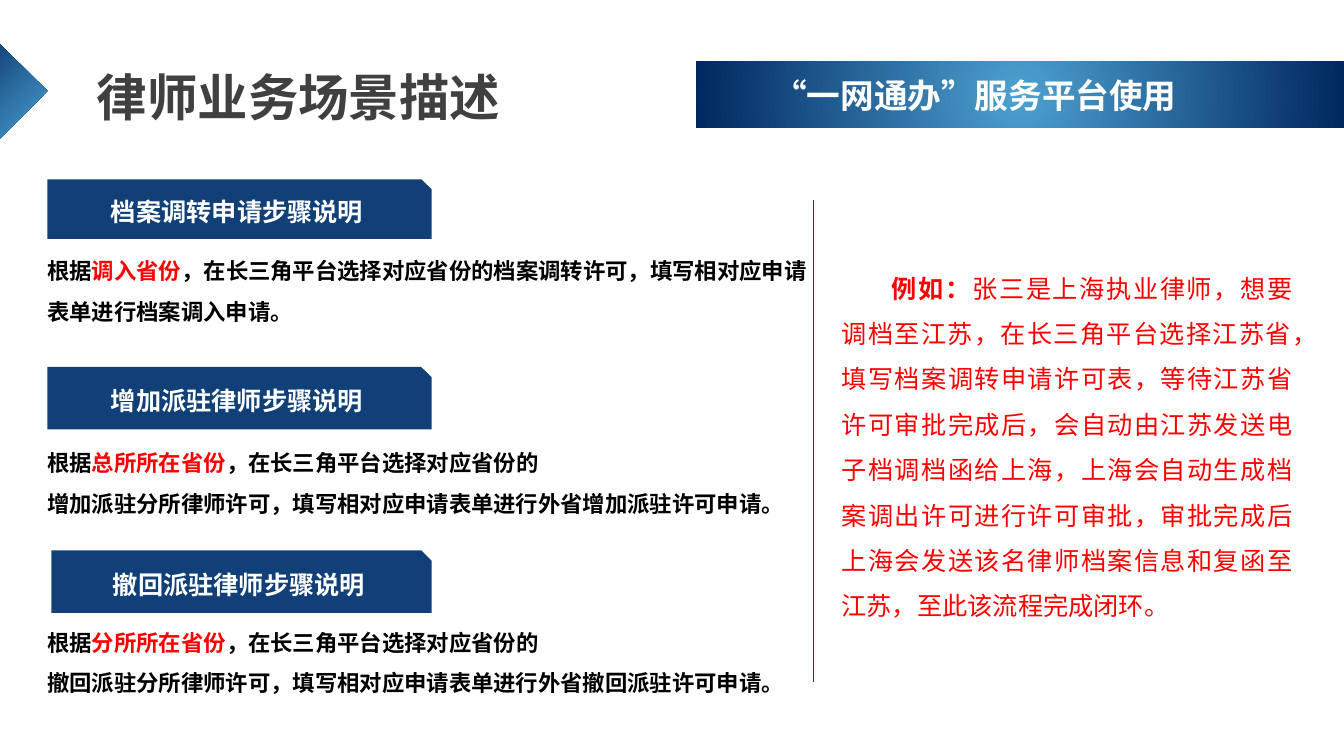
from dataclasses import dataclass

from lxml import etree
from pptx import Presentation, util as u
from pptx.dml.color import RGBColor
from pptx.enum import shapes, text
from pptx.oxml import ns


@dataclass(frozen=True)
class Theme:
    font: str = "Noto Sans CJK SC"
    navy: str = "104077"
    red: str = "FF0000"
    black: str = "000000"
    white: str = "FFFFFF"
    grey: str = "404040"
    gradient: tuple = ((0, "4DA1D0"), (100, "002760"))
    title: int = 36
    banner: int = 24
    heading: int = 18
    body: int = 16


class SlideBuilder:
    GRID = 100

    def __init__(self, presentation, theme):
        self.theme = theme
        self.column = presentation.slide_width / self.GRID
        self.row = presentation.slide_height / self.GRID
        self.slide = presentation.slides.add_slide(presentation.slide_layouts[5])

    def place(self, left, top, width, height):
        return [round(value * step) for value, step in
                zip((left, top, width, height), (self.column, self.row) * 2)]

    def apply(self, target, values):
        for name, value in values.items():
            setattr(target, name, value)

    def fill_text(self, shape, paragraphs, size, frame_format=None, paragraph_format=None):
        frame = shape.text_frame
        self.apply(frame, {"word_wrap": True, "auto_size": text.MSO_AUTO_SIZE.NONE,
                           **(frame_format or {})})
        for index, runs in enumerate(paragraphs):
            paragraph = frame.add_paragraph() if index else frame.paragraphs[0]
            self.apply(paragraph, paragraph_format or {})
            for content, color, bold in runs:
                run = paragraph.add_run()
                run.text = content
                self.apply(run.font, {"size": u.Pt(size), "bold": bold, "name": self.theme.font})
                run.font.color.rgb = RGBColor.from_string(color)
                latin = run.font._element.find(ns.qn("a:latin"))
                latin.addnext(etree.Element(ns.qn("a:ea"), typeface=self.theme.font))

    def title(self, area, content):
        shape = self.slide.shapes.title
        self.apply(shape, dict(zip(("left", "top", "width", "height"), self.place(*area))))
        self.fill_text(shape, [[(content, self.theme.grey, True)]], self.theme.title,
                       {"vertical_anchor": text.MSO_ANCHOR.TOP},
                       {"alignment": text.PP_ALIGN.LEFT, "line_spacing": 1.2})

    def shape(self, kind, area, color=None):
        shape = self.slide.shapes.add_shape(kind, *self.place(*area))
        shape.shadow.inherit = False
        shape.line.fill.background()
        if color:
            shape.fill.solid()
            shape.fill.fore_color.rgb = RGBColor.from_string(color)
        return shape

    def radial(self, shape, focus):
        gradient = etree.Element(ns.qn("a:gradFill"), rotWithShape="1")
        stops = etree.SubElement(gradient, ns.qn("a:gsLst"))
        for position, color in self.theme.gradient:
            stop = etree.SubElement(stops, ns.qn("a:gs"), pos=str(position * 1000))
            etree.SubElement(stop, ns.qn("a:srgbClr"), val=color)
        circle = etree.SubElement(gradient, ns.qn("a:path"), {"path": "circle"})
        etree.SubElement(circle, ns.qn("a:fillToRect"),
                         {side: str(share * 1000) for side, share in zip("ltrb", focus)})
        shape._element.spPr.find(ns.qn("a:prstGeom")).addnext(gradient)

    def heading(self, area, content):
        shape = self.shape(shapes.MSO_SHAPE.SNIP_1_RECTANGLE, area, self.theme.navy)
        self.fill_text(shape, [[(content, self.theme.white, True)]], self.theme.heading,
                       {"vertical_anchor": text.MSO_ANCHOR.MIDDLE},
                       {"alignment": text.PP_ALIGN.CENTER})

    def text(self, area, paragraphs, size, frame_format=None, paragraph_format=None):
        box = self.slide.shapes.add_textbox(*self.place(*area))
        self.fill_text(box, paragraphs, size, frame_format, paragraph_format)
        return box

    def divider(self, column, top, bottom):
        start_x, start_y, end_x, end_y = self.place(column, top, column, bottom)
        line = self.slide.shapes.add_connector(
            shapes.MSO_CONNECTOR.STRAIGHT, start_x, start_y, end_x, end_y)
        line.line.color.rgb = RGBColor.from_string(self.theme.navy)
        line.line.width = u.Pt(0.5)
        etree.SubElement(line._element.spPr, ns.qn("a:effectLst"))


def main():
    presentation = Presentation()
    presentation.slide_width, presentation.slide_height = u.Inches(13.33), u.Inches(7.5)
    theme = Theme()
    builder = SlideBuilder(presentation, theme)

    banner = builder.shape(shapes.MSO_SHAPE.PARALLELOGRAM, (51.75, 8.13, 48.25, 8.8))
    banner.adjustments[0] = 0
    builder.radial(banner, (50, 50, 50, 50))
    marker = builder.shape(shapes.MSO_SHAPE.RIGHT_TRIANGLE, (-2.55, 7.6, 5.03, 8.93))
    marker.rotation = 224.6
    builder.radial(marker, (100, 100, 0, 0))

    builder.title((6.45, 6.53, 78.9, 10.27), "律师业务场景描述")
    builder.text((56.63, 9.2, 31.8, 6.67), [[("“一网通办”服务平台使用", theme.white, True)]],
                 theme.banner, {"word_wrap": False}, {"alignment": text.PP_ALIGN.CENTER})

    steps = [
        ("档案调转申请步骤说明", (3.53, 23.73, 28.58, 7.87), (2.78, 31.87, 58.05, 11.47),
         "调入省份", ["，在长三角平台选择对应省份的档案调转许可，填写相对应申请表单进行档案调入申请。"]),
        ("增加派驻律师步骤说明", (3.53, 48.53, 28.58, 8.27), (2.78, 56.93, 56.7, 12.13),
         "总所所在省份", ["，在长三角平台选择对应省份的",
                    "增加派驻分所律师许可，填写相对应申请表单进行外省增加派驻许可申请。"]),
        ("撤回派驻律师步骤说明", (3.83, 72.8, 28.28, 8.27), (2.78, 80.67, 56.7, 12.13),
         "分所所在省份", ["，在长三角平台选择对应省份的",
                    "撤回派驻分所律师许可，填写相对应申请表单进行外省撤回派驻许可申请。"]),
    ]
    for heading, heading_area, body_area, province, lines in steps:
        paragraphs = [[(line, theme.black, True)] for line in lines]
        paragraphs[0][:0] = [("根据", theme.black, True), (province, theme.red, True)]
        builder.text(body_area, paragraphs, theme.body,
                     {"vertical_anchor": text.MSO_ANCHOR.MIDDLE}, {"line_spacing": 1.5})
        builder.heading(heading_area, heading)

    builder.divider(60.53, 26.4, 90.27)
    example = builder.text(
        (61.88, 33.47, 35.03, 49.87),
        [[("例如：", theme.red, True),
          ("张三是上海执业律师，想要调档至江苏，在长三角平台选择江苏省，填写档案调转申请许可表，"
           "等待江苏省许可审批完成后，会自动由江苏发送电子档调档函给上海，上海会自动生成档案调出许可"
           "进行许可审批，审批完成后上海会发送该名律师档案信息和复函至江苏，至此该流程完成闭环。",
           theme.red, False)]],
        theme.heading, None, {"alignment": text.PP_ALIGN.JUSTIFY, "line_spacing": 1.5})
    properties = example.text_frame.paragraphs[0]._p.get_or_add_pPr()
    properties.set("indent", str(u.Inches(0.5)))

    presentation.save("out.pptx")


if __name__ == "__main__":
    main()
